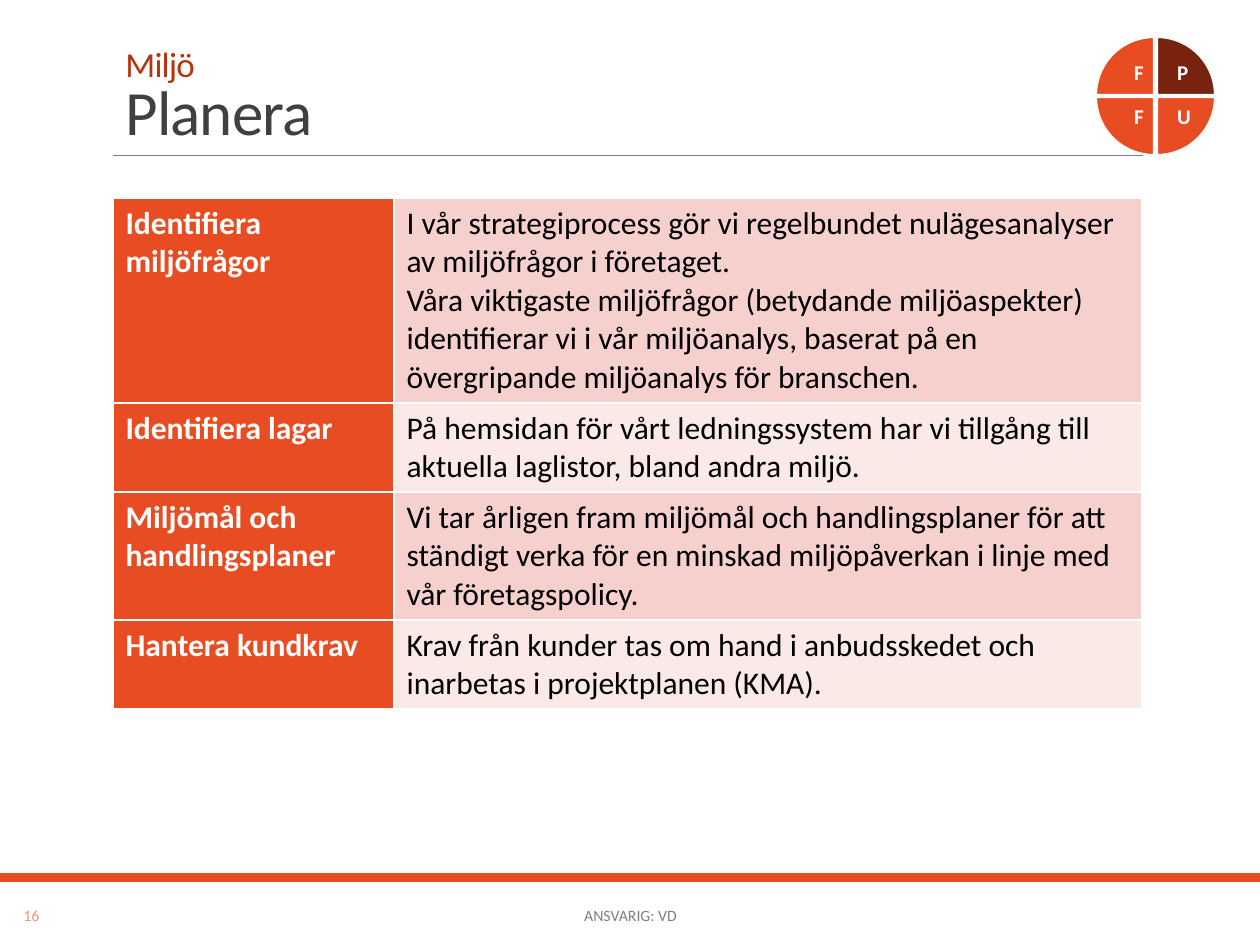
from lxml import etree
from pptx import Presentation
from pptx.dml.color import RGBColor as RGB
from pptx.enum.shapes import MSO_CONNECTOR as CONNECTOR, MSO_SHAPE as SHAPE
from pptx.enum.text import MSO_ANCHOR as ANCHOR, PP_ALIGN as ALIGN
from pptx.oxml.ns import qn
from pptx.util import Pt

PX = 914400 / 126
COLORS = {
    "orange": "E84C22", "brown": "78230D", "rust": "B53513", "dark": "404040",
    "gray": "808080", "salmon": "F1947A", "pink": "F6D0CD", "pale": "FBE9E8",
    "white": "FFFFFF", "black": "000000",
}


def px(*lengths):
    return [round(length * PX) for length in lengths]


def write(paragraph, text, size=18, color="black", bold=False, align=ALIGN.LEFT,
          line_spacing=None, tracking=None):
    paragraph.alignment = align
    paragraph.line_spacing = line_spacing
    run = paragraph.add_run()
    run.text = text
    run.font.name = "Calibri"
    run.font.size = Pt(size)
    run.font.bold = bold
    run.font.color.rgb = RGB.from_string(COLORS[color])
    if tracking is not None:
        run.font._element.set("spc", str(tracking))


prs = Presentation()
prs.slide_width, prs.slide_height = px(1260, 945)
slide = prs.slides.add_slide(prs.slide_layouts[6])
shapes = slide.shapes

# Footer band and rule under the title
band = shapes.add_shape(SHAPE.RECTANGLE, *px(0, 873, 1260, 9))
band.shadow.inherit = False
band.fill.solid()
band.fill.fore_color.rgb = RGB.from_string(COLORS["orange"])
band.line.fill.background()

rule = shapes.add_connector(CONNECTOR.STRAIGHT, *px(113, 155, 1143, 155))
rule.line.color.rgb = RGB.from_string(COLORS["gray"])
rule.line.width = Pt(0.5)
etree.SubElement(rule._element.spPr, qn("a:effectLst"))

# Title
title = shapes.add_textbox(*px(113, 39, 1040, 116)).text_frame
title.word_wrap = True
title.vertical_anchor = ANCHOR.BOTTOM
heading = title.paragraphs[0]
write(heading, "Miljö", size=20, color="rust", line_spacing=0.85, tracking=-50)
heading.add_line_break()
write(heading, "Planera", size=36, color="dark", line_spacing=0.85, tracking=-50)

# Planning table: topic, row height, description paragraphs
topics = [
    ("Identifiera miljöfrågor", 205, [
        "I vår strategiprocess gör vi regelbundet nulägesanalyser av miljöfrågor i företaget.",
        "Våra viktigaste miljöfrågor (betydande miljöaspekter) identifierar vi i vår "
        "miljöanalys, baserat på en övergripande miljöanalys för branschen."]),
    ("Identifiera lagar", 89, [
        "På hemsidan för vårt ledningssystem har vi tillgång till aktuella laglistor, "
        "bland andra miljö."]),
    ("Miljömål och handlingsplaner", 128, [
        "Vi tar årligen fram miljömål och handlingsplaner för att ständigt verka för en "
        "minskad miljöpåverkan i linje med vår företagspolicy."]),
    ("Hantera kundkrav", 89, [
        "Krav från kunder tas om hand i anbudsskedet och inarbetas i projektplanen (KMA)."]),
]
table_height = sum(height for _, height, _ in topics)
plan = shapes.add_table(len(topics), 2, *px(113, 198, 1029, table_height)).table
plan.first_row = plan.horz_banding = False
plan.columns[0].width, plan.columns[1].width = px(281, 748)

for row, (topic, height, description) in enumerate(topics):
    plan.rows[row].height = px(height)[0]
    columns = [([topic], "orange", "white", True),
               (description, ("pink", "pale")[row % 2], "black", False)]
    for column, (lines, fill, color, bold) in enumerate(columns):
        cell = plan.cell(row, column)
        for side in ("a:lnL", "a:lnR", "a:lnT", "a:lnB"):
            border = etree.SubElement(cell._tc.get_or_add_tcPr(), qn(side), w=str(Pt(1)))
            paint = etree.SubElement(border, qn("a:solidFill"))
            etree.SubElement(paint, qn("a:srgbClr"), val=COLORS["white"])
        cell.fill.solid()
        cell.fill.fore_color.rgb = RGB.from_string(COLORS[fill])
        for index, line in enumerate(lines):
            frame = cell.text_frame
            paragraph = frame.add_paragraph() if index else frame.paragraphs[0]
            write(paragraph, line, color=color, bold=bold)

# Four-phase wheel, clockwise from top left, with the current phase dark
phases = [("F", 0, 0, "orange"), ("P", 1, 0, "brown"),
          ("U", 1, 1, "orange"), ("F", 0, 1, "orange")]
for turn, (letter, column, row, fill) in enumerate(phases):
    wedge = shapes.add_shape(SHAPE.PIE_WEDGE, *px(1096 + 61 * column, 37 + 60 * row, 58, 58))
    wedge.rotation = 90 * turn
    wedge.shadow.inherit = False
    wedge.fill.solid()
    wedge.fill.fore_color.rgb = RGB.from_string(COLORS[fill])
    wedge.line.color.rgb = RGB.from_string(COLORS["white"])
    wedge.line.width = Pt(1.25)

    label = shapes.add_textbox(*px(1114 + 43 * column, 53 + 44 * row, 42, 42)).text_frame
    label.word_wrap = True
    label.vertical_anchor = ANCHOR.MIDDLE
    (label.margin_left, label.margin_top,
     label.margin_right, label.margin_bottom) = px(20, 20, 20, 20)
    write(label.paragraphs[0], letter, size=12, color="white", bold=True,
          align=ALIGN.CENTER, line_spacing=0.9)

# Page number and responsible person
for text, left, width, color in [("16", 5, 53, "salmon"), ("ANSVARIG: VD", 381, 499, "gray")]:
    footer = shapes.add_textbox(*px(left, 890, width, 50)).text_frame
    footer.word_wrap = True
    footer.vertical_anchor = ANCHOR.MIDDLE
    write(footer.paragraphs[0], text, size=9, color=color, align=ALIGN.CENTER)

prs.save("out.pptx")
